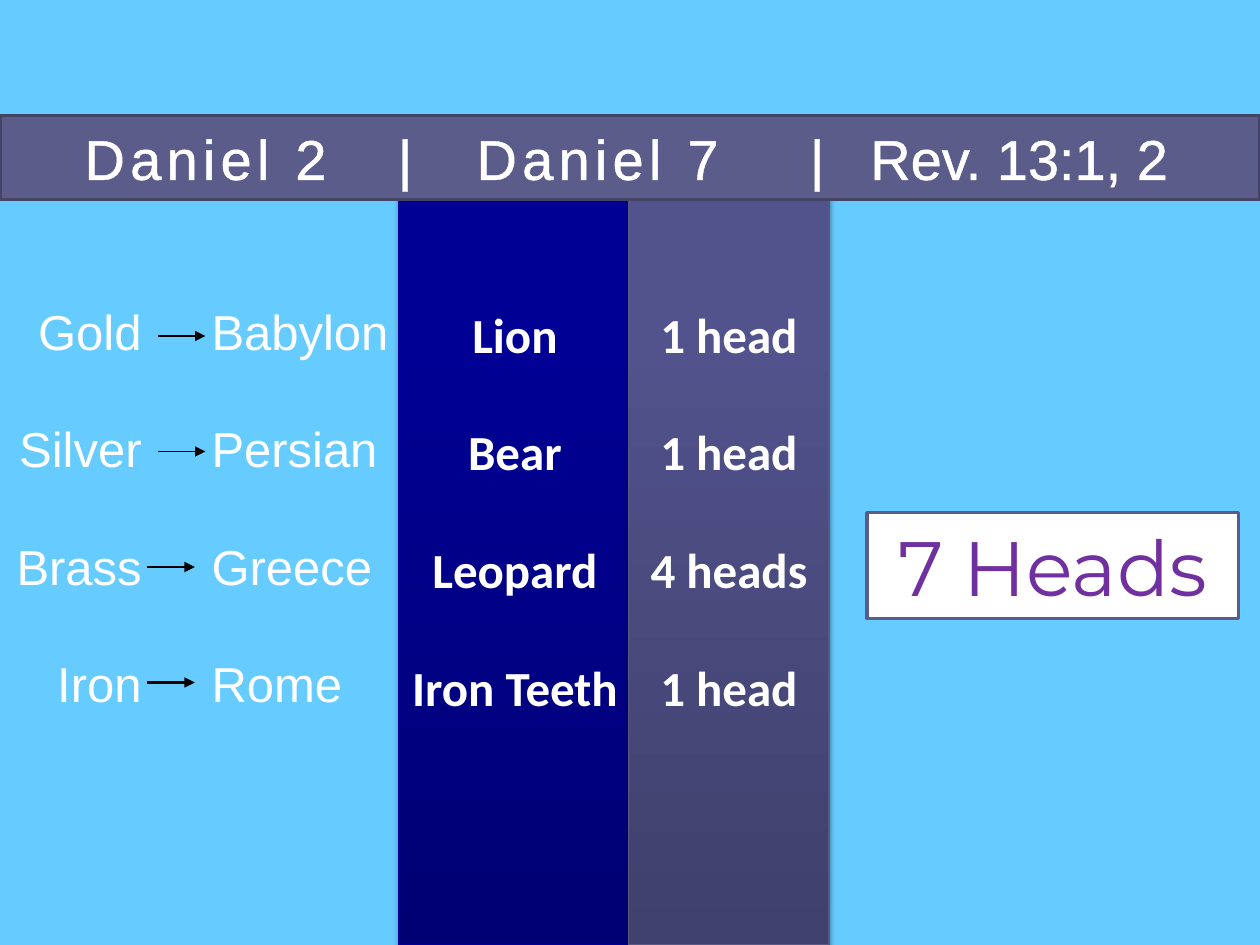
from copy import deepcopy

from lxml.etree import SubElement
from pptx import Presentation
from pptx.dml.color import RGBColor
from pptx.enum.shapes import MSO_CONNECTOR, MSO_SHAPE
from pptx.enum.text import MSO_ANCHOR, PP_ALIGN
from pptx.oxml.ns import qn
from pptx.util import Pt

COLORS = {
    "sky": "66CCFF", "white": "FFFFFF", "black": "000000", "purple": "7030A0",
    "slate": "5C5C8A", "slate_edge": "444466",
    "beast_edge": "000097", "head_edge": "595988",
}
BEAST_GRADIENT = ((0, "000073"), (0.8, "000095"), (1, "000096"))
HEAD_GRADIENT = ((0, "40406C"), (0.8, "52528C"), (1, "52528E"))

ROWS = (
    ("Gold", "Babylon", "Lion", "1 head"),
    ("Silver", "Persian", "Bear", "1 head"),
    ("Brass", "Greece", "Leopard", "4 heads"),
    ("Iron", "Rome", "Iron Teeth", "1 head"),
)
ROW_LINE = 33.6
ROW_FORMAT = {"line_spacing": Pt(ROW_LINE), "space_after": Pt(ROW_LINE)}
METAL_FONT = {"name": "Arial", "size": Pt(28)}
BEAST_FONT = {"name": "Calibri", "size": Pt(28), "bold": True}
HEADER_FONT = {"name": "Arial", "size": Pt(32)}
TOTAL_FONT = {"name": "Montserrat", "size": Pt(44)}
ARROWS = ((90, 1.5), (90, 0.75), (84, 1.5), (84, 1.5))
HEADER_TABS = (179, 224, 414.5, 449)


def rgb(color):
    return RGBColor.from_string(COLORS.get(color, color))


def apply(target, values):
    for name, value in values.items():
        setattr(target, name, value)


def add_run(paragraph, text, font, color):
    run = paragraph.add_run()
    run.text = text
    apply(run.font, font)
    run.font.color.rgb = rgb(color)
    return run


def outline_text(run, color, width):
    properties = run.font._element
    line = SubElement(properties, qn("a:ln"), w=str(Pt(width)))
    fill = SubElement(line, qn("a:solidFill"))
    SubElement(fill, qn("a:srgbClr"), val=COLORS[color])
    properties.insert(0, line)


def write_rows(frame, texts, font, align):
    for index, text in enumerate(texts):
        paragraph = frame.add_paragraph() if index else frame.paragraphs[0]
        apply(paragraph, {"alignment": align, **ROW_FORMAT})
        add_run(paragraph, text, font, "white")


def add_panel(slide, box, edge, width):
    panel = slide.shapes.add_shape(MSO_SHAPE.RECTANGLE, *map(Pt, box))
    panel.shadow.inherit = False
    panel.line.color.rgb = rgb(edge)
    panel.line.width = Pt(width)
    return panel


def fill_gradient(panel, stops):
    panel.fill.gradient()
    panel.fill.gradient_angle = 90
    stop_list = panel._element.spPr.find(qn("a:gradFill")).find(qn("a:gsLst"))
    stop_list.append(deepcopy(stop_list[0]))
    for stop, (position, color) in zip(panel.fill.gradient_stops, stops):
        stop.position = position
        stop.color.rgb = rgb(color)


def cast_shadow(panel):
    effects = panel._element.spPr.find(qn("a:effectLst"))
    shadow = SubElement(effects, qn("a:outerShdw"), blurRad=str(Pt(3.1)),
                        dist=str(Pt(1.8)), dir="5400000", rotWithShape="0")
    color = SubElement(shadow, qn("a:srgbClr"), val=COLORS["black"])
    SubElement(color, qn("a:alpha"), val="35000")


def add_column(slide, left, width, stops, edge, texts):
    column = add_panel(slide, (left, 102, width, 438), edge, 0.75)
    fill_gradient(column, stops)
    cast_shadow(column)
    frame = column.text_frame
    apply(frame, {"vertical_anchor": MSO_ANCHOR.TOP, "word_wrap": True,
                  "margin_top": Pt(72), "margin_left": 0, "margin_right": 0})
    write_rows(frame, texts, BEAST_FONT, PP_ALIGN.CENTER)


def add_list(slide, left, width, texts, align):
    box = slide.shapes.add_textbox(Pt(left), Pt(168.5), Pt(width), Pt(248))
    box.text_frame.word_wrap = True
    write_rows(box.text_frame, texts, METAL_FONT, align)


def add_arrow(slide, left, y, width):
    arrow = slide.shapes.add_connector(
        MSO_CONNECTOR.STRAIGHT, Pt(left), Pt(y), Pt(left + 27.4), Pt(y))
    arrow.line.color.rgb = rgb("black")
    arrow.line.width = Pt(width)
    SubElement(arrow.line._get_or_add_ln(), qn("a:tailEnd"), type="triangle")
    SubElement(arrow._element.spPr, qn("a:effectLst"))


def add_header(slide):
    header = add_panel(slide, (0, 66, 720, 48), "slate_edge", 2)
    header.fill.solid()
    header.fill.fore_color.rgb = rgb("slate")
    frame = header.text_frame
    apply(frame, {"margin_left": Pt(48.3), "margin_right": 0,
                  "word_wrap": True, "vertical_anchor": MSO_ANCHOR.MIDDLE})
    paragraph = frame.paragraphs[0]
    paragraph.alignment = PP_ALIGN.LEFT
    tabs = SubElement(paragraph._p.get_or_add_pPr(), qn("a:tabLst"))
    for position in HEADER_TABS:
        SubElement(tabs, qn("a:tab"), pos=str(Pt(position)), algn="l")
    for text, spacing in (("Daniel 2\t|\tDaniel 7\t|\t", 3), ("Rev. 13:1, 2", 0)):
        run = add_run(paragraph, text, HEADER_FONT, "white")
        run.font._element.set("spc", str(spacing * 100))
        outline_text(run, "white", 1.45)


def add_total(slide):
    total = add_panel(slide, (495.4, 293, 212.4, 60.5), "slate", 2)
    total.fill.solid()
    total.fill.fore_color.rgb = rgb("white")
    frame = total.text_frame
    apply(frame, {"word_wrap": False, "vertical_anchor": MSO_ANCHOR.MIDDLE})
    paragraph = frame.paragraphs[0]
    paragraph.alignment = PP_ALIGN.CENTER
    outline_text(add_run(paragraph, "7 Heads", TOTAL_FONT, "purple"), "black", 0.75)


def main():
    deck = Presentation()
    apply(deck, {"slide_width": Pt(720), "slide_height": Pt(540)})
    slide = deck.slides.add_slide(deck.slide_layouts[6])
    slide.background.fill.solid()
    slide.background.fill.fore_color.rgb = rgb("sky")

    metals, kingdoms, beasts, heads = zip(*ROWS)
    add_column(slide, 228, 132.5, BEAST_GRADIENT, "beast_edge", beasts)
    add_column(slide, 359.3, 114.5, HEAD_GRADIENT, "head_edge", heads)
    add_header(slide)
    add_list(slide, 0, 88, metals, PP_ALIGN.RIGHT)
    add_list(slide, 113.8, 136, kingdoms, PP_ALIGN.LEFT)
    for row, (left, width) in enumerate(ARROWS):
        add_arrow(slide, left, 192 + 66 * row, width)
    add_total(slide)
    deck.save("out.pptx")


if __name__ == "__main__":
    main()
